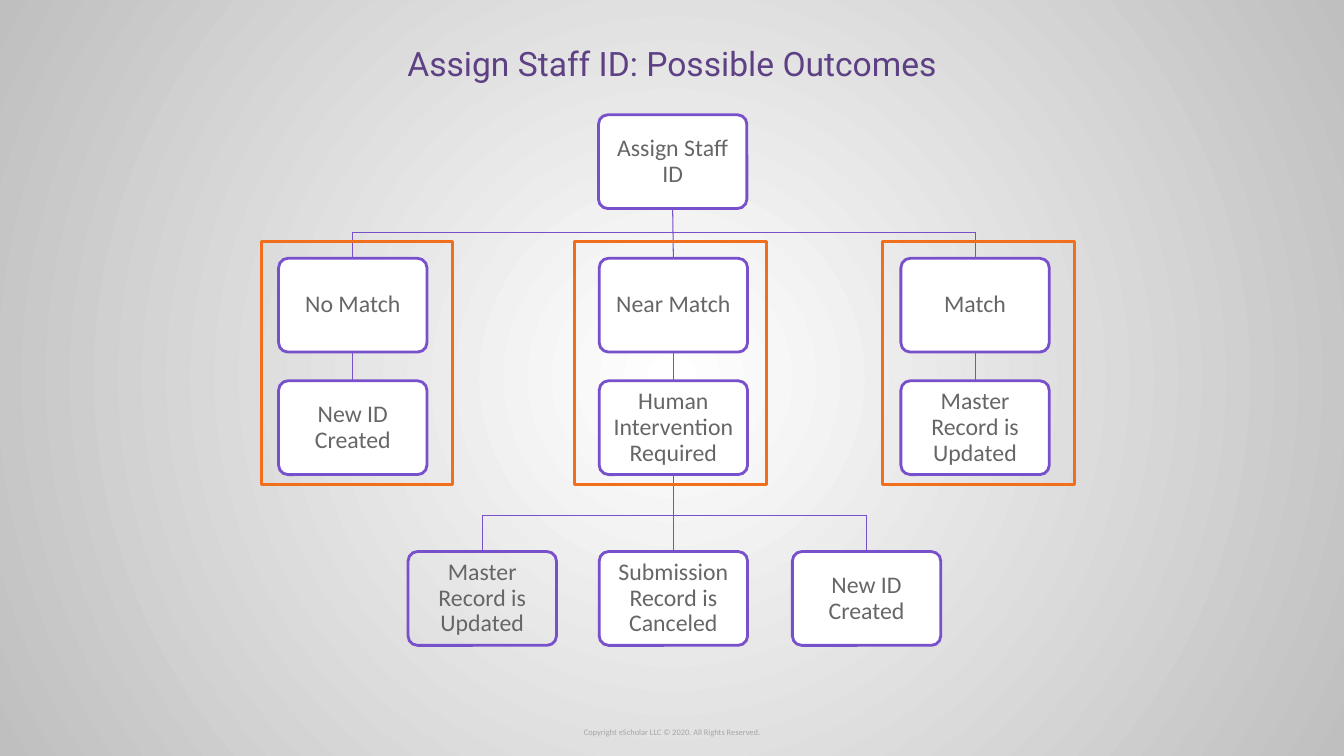
from pptx import Presentation
from pptx.dml.color import RGBColor
from pptx.enum.shapes import MSO_CONNECTOR as CONN, MSO_SHAPE as SHAPE
from pptx.enum.text import MSO_ANCHOR as ANCHOR, PP_ALIGN as ALIGN
from pptx.oxml import parse_xml
from pptx.oxml.ns import nsdecls, qn
from pptx.util import Pt

COLORS = {
    "purple": "7950CB", "title": "5E4085", "orange": "F16E1D", "text": "666666",
    "copyright": "A6A6A6", "white": "FFFFFF", "edge": "BFBFBF",
}
SLIDE_W, SLIDE_H = 960, 540
BOX_W, BOX_H = 106, 67
FRAME_W, FRAME_H, FRAME_TOP = 137, 173.5, 172.8
ROOT_TOP, MATCH_TOP, RESULT_TOP, FINAL_TOP = 82, 184.5, 272, 394
MATCH_BUS, FINAL_BUS = 166, 368.5
# column centre, centre of its frame, match type, result
BRANCHES = [
    (252, 255, "No Match", "New ID Created"),
    (481, 479, "Near Match", "Human Intervention Required"),
    (696.5, 699, "Match", "Master Record is Updated"),
]
FINALS = [
    (344.5, "Master Record is Updated", None),
    (481, "Submission Record is Canceled", "white"),
    (619, "New ID Created", "white"),
]


def rgb(name):
    return RGBColor.from_string(COLORS[name])


def set_text(shape, text, size, color, font="Calibri", inset=0, spacing=None):
    tf = shape.text_frame
    tf.word_wrap = True
    tf.vertical_anchor = ANCHOR.MIDDLE
    tf.margin_left = tf.margin_right = tf.margin_top = tf.margin_bottom = Pt(inset)
    p = tf.paragraphs[0]
    p.alignment = ALIGN.CENTER
    p.line_spacing = spacing
    r = p.add_run()
    r.text = text
    r.font.size = Pt(size)
    r.font.name = font
    r.font.color.rgb = rgb(color)


def set_background(s):
    """Radial gradient, white in the middle of the slide."""
    fill = s.background.fill
    fill.gradient()
    for stop, color in zip(fill.gradient_stops, ("white", "edge")):
        stop.color.rgb = rgb(color)
    grad = next(s.element.iter(qn("a:gradFill")))
    grad.replace(grad.find(qn("a:lin")), parse_xml(
        f'<a:path {nsdecls("a")} path="circle">'
        '<a:fillToRect l="50000" t="50000" r="50000" b="50000"/></a:path>'))


def add_outline(s, kind, center, top, w, h, color, weight, fill=None):
    sp = s.shapes.add_shape(kind, Pt(center - w / 2), Pt(top), Pt(w), Pt(h))
    sp.shadow.inherit = False
    sp.line.color.rgb = rgb(color)
    sp.line.width = Pt(weight)
    if fill:
        sp.fill.solid()
        sp.fill.fore_color.rgb = rgb(fill)
    else:
        sp.fill.background()
    return sp


def add_box(s, center, top, text, fill="white"):
    sp = add_outline(s, SHAPE.ROUNDED_RECTANGLE, center, top, BOX_W, BOX_H,
                     "purple", 2, fill)
    sp.adjustments[0] = 0.1
    set_text(sp, text, 17, "text", inset=5, spacing=0.9)
    return sp


def add_line(s, x1=0, y1=0, x2=0, y2=0, upper=None, lower=None):
    """Line between two points, or from the bottom of upper to the top of lower."""
    line = s.shapes.add_connector(CONN.STRAIGHT, Pt(x1), Pt(y1), Pt(x2), Pt(y2))
    line.line.color.rgb = rgb("purple")
    line.line.width = Pt(0.75)
    line.element.spPr.append(parse_xml(f'<a:effectLst {nsdecls("a")}/>'))
    if upper is not None:
        line.begin_connect(upper, 2)
    if lower is not None:
        line.end_connect(lower, 0)


def add_bus(s, y, columns, parent, children):
    """Parent above a horizontal line from which the children hang."""
    add_line(s, columns[0], y, columns[-1], y)
    left, middle, right = children
    add_line(s, upper=parent, lower=middle)
    for x, child in ((columns[0], left), (columns[-1], right)):
        add_line(s, x, y, x, y, lower=child)


def main():
    prs = Presentation()
    prs.slide_width, prs.slide_height = Pt(SLIDE_W), Pt(SLIDE_H)
    s = prs.slides.add_slide(prs.slide_layouts[5])
    set_background(s)

    title = s.shapes.title
    title.left, title.top, title.width, title.height = Pt(0), Pt(0), Pt(SLIDE_W), Pt(90)
    set_text(title, "Assign Staff ID: Possible Outcomes", 24, "title", font="Roboto")

    root = add_box(s, 480.5, ROOT_TOP, "Assign Staff ID")
    matches, results = [], []
    for x, _, match, result in BRANCHES:
        matches.append(add_box(s, x, MATCH_TOP, match))
        results.append(add_box(s, x, RESULT_TOP, result))
        add_line(s, upper=matches[-1], lower=results[-1])
    finals = [add_box(s, x, FINAL_TOP, text, fill) for x, text, fill in FINALS]

    add_bus(s, MATCH_BUS, [b[0] for b in BRANCHES], root, matches)
    add_bus(s, FINAL_BUS, [f[0] for f in FINALS], results[1], finals)

    for _, center, _, _ in BRANCHES:
        add_outline(s, SHAPE.RECTANGLE, center, FRAME_TOP, FRAME_W, FRAME_H,
                    "orange", 2.25)

    footer = s.shapes.add_textbox(Pt(0), Pt(516), Pt(SLIDE_W), Pt(14.5))
    set_text(footer, "Copyright eScholar LLC © 2020. All Rights Reserved.", 6, "copyright")

    prs.save("out.pptx")


if __name__ == "__main__":
    main()
